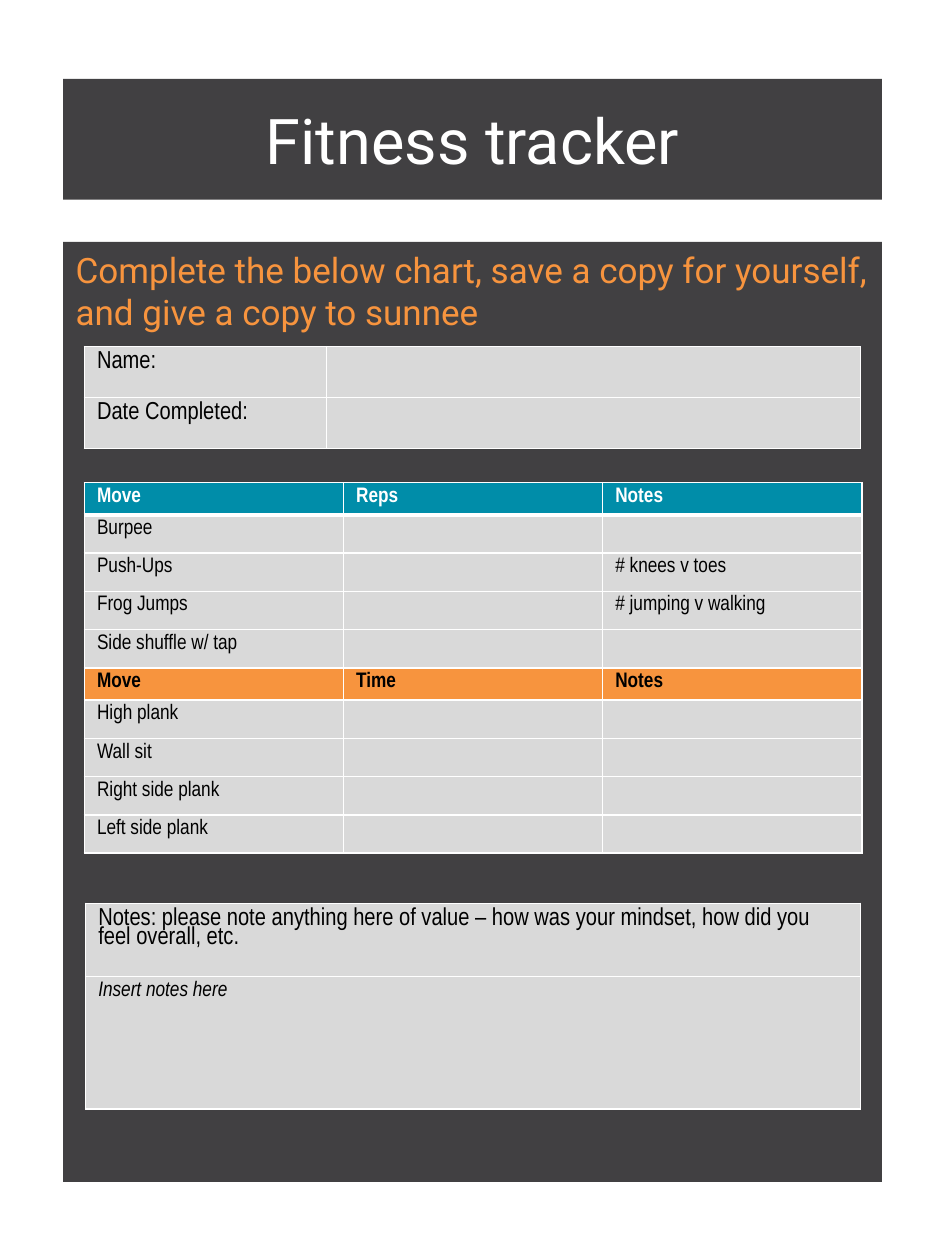
from dataclasses import dataclass

from lxml import etree
from pptx import Presentation
from pptx import util as u
from pptx.dml.color import RGBColor
from pptx.enum import text
from pptx.oxml.ns import qn

# The slide is a grid of 75 columns by 100 rows.
COLUMNS, ROWS = 75, 100
WIDTH, HEIGHT = u.Inches(7.5), u.Inches(10)

CHARCOAL = RGBColor(0x41, 0x40, 0x42)
WHITE = RGBColor(0xFF, 0xFF, 0xFF)
BLACK = RGBColor(0x00, 0x00, 0x00)
ORANGE = RGBColor(0xF7, 0x94, 0x3E)
TEAL = RGBColor(0x00, 0x8D, 0xA9)
GREY = RGBColor(0xD9, 0xD9, 0xD9)

HEADING_FONT, TABLE_FONT = "Roboto", "Arial Narrow"
TABLE_LINE_SPACING = 0.84


@dataclass(frozen=True)
class Area:
    """A rectangle in grid columns and rows."""
    left: float
    top: float
    width: float
    height: float

    def lengths(self) -> tuple[int, int, int, int]:
        return (across(self.left), down(self.top),
                across(self.width), down(self.height))


@dataclass(frozen=True)
class RowStyle:
    size: int = 12
    color: RGBColor = BLACK
    fill: RGBColor = GREY
    bold: bool = False
    italic: bool = False
    top_line: float = 1
    bottom_line: float = 1


@dataclass(frozen=True)
class Row:
    cells: tuple[str, ...]
    height: float
    style: RowStyle


@dataclass(frozen=True)
class Grid:
    left: float
    top: float
    column_widths: tuple[float, ...]
    rows: tuple[Row, ...]


def across(columns: float) -> int:
    return round(WIDTH * columns / COLUMNS)


def down(rows: float) -> int:
    return round(HEIGHT * rows / ROWS)


def fill_placeholder(shape, area: Area, words: str, size: int, color: RGBColor,
                     alignment, anchor) -> None:
    shape.left, shape.top, shape.width, shape.height = area.lengths()
    shape.fill.solid()
    shape.fill.fore_color.rgb = CHARCOAL
    frame = shape.text_frame
    frame.word_wrap = True
    frame.auto_size = text.MSO_AUTO_SIZE.NONE
    frame.vertical_anchor = anchor
    paragraph = frame.paragraphs[0]
    paragraph.alignment = alignment
    paragraph.space_before = u.Pt(0)
    properties = paragraph._p.get_or_add_pPr()
    properties.set("marL", "0")
    properties.set("indent", "0")
    etree.SubElement(properties, qn("a:buNone"))
    run = paragraph.add_run()
    run.text = words
    run.font.name, run.font.size = HEADING_FONT, u.Pt(size)
    run.font.color.rgb = color


def add_borders(cell, style: RowStyle) -> None:
    properties = cell._tc.get_or_add_tcPr()
    for side, points in (("L", 1), ("R", 1),
                         ("T", style.top_line), ("B", style.bottom_line)):
        line = etree.SubElement(properties, qn(f"a:ln{side}"), w=str(u.Pt(points)))
        fill = etree.SubElement(line, qn("a:solidFill"))
        etree.SubElement(fill, qn("a:srgbClr"), val=str(WHITE))


def write_cell(cell, words: str, style: RowStyle) -> None:
    add_borders(cell, style)
    cell.fill.solid()
    cell.fill.fore_color.rgb = style.fill
    paragraph = cell.text_frame.paragraphs[0]
    paragraph.line_spacing = TABLE_LINE_SPACING
    if not words:
        # Keeps an empty cell as low as its neighbours.
        etree.SubElement(paragraph._p, qn("a:endParaRPr"), sz=str(style.size * 100))
        return
    run = paragraph.add_run()
    run.text = words
    font = run.font
    font.name, font.size = TABLE_FONT, u.Pt(style.size)
    font.bold, font.italic = style.bold, style.italic
    font.color.rgb = style.color


def add_grid(slide, grid: Grid) -> None:
    area = Area(grid.left, grid.top, sum(grid.column_widths),
                sum(row.height for row in grid.rows))
    table = slide.shapes.add_table(
        len(grid.rows), len(grid.column_widths), *area.lengths()).table
    table.first_row = table.horz_banding = False
    for column, width in zip(table.columns, grid.column_widths):
        column.width = across(width)
    for table_row, row in zip(table.rows, grid.rows):
        table_row.height = down(row.height)
        for cell, words in zip(table_row.cells, row.cells):
            write_cell(cell, words, row.style)


PLAIN = RowStyle()
LARGE = RowStyle(size=14)
REPS_HEADER = RowStyle(color=WHITE, fill=TEAL, bold=True, bottom_line=3)
BELOW_HEADER = RowStyle(top_line=3)
TIME_HEADER = RowStyle(fill=ORANGE, bold=True)
MOVE_HEIGHT = 2.57

MOVES = (
    (("Move", "Reps", "Notes"), REPS_HEADER),
    (("Burpee", "", ""), BELOW_HEADER),
    (("Push-Ups", "", "# knees v toes"), PLAIN),
    (("Frog Jumps", "", "# jumping v walking"), PLAIN),
    (("Side shuffle w/ tap", "", ""), PLAIN),
    (("Move", "Time", "Notes"), TIME_HEADER),
    (("High plank", "", ""), PLAIN),
    (("Wall sit", "", ""), PLAIN),
    (("Right side plank", "", ""), PLAIN),
    (("Left side plank", "", ""), PLAIN),
)

GRIDS = (
    Grid(6.7, 38.3, (20.57,) * 3,
         tuple(Row(cells, MOVE_HEIGHT, style) for cells, style in MOVES)),
    Grid(6.7, 27.5, (19.2, 42.4),
         tuple(Row((label, ""), 4.05, LARGE)
               for label in ("Name:", "Date Completed:"))),
    Grid(6.8, 71.7, (61.5,), (
        Row(("Notes: please note anything here of value – how was your mindset, "
             "how did you feel overall, etc.",), 5.8, LARGE),
        Row(("Insert notes here",), 10.5, RowStyle(italic=True)),
    )),
)


def main() -> None:
    presentation = Presentation()
    presentation.slide_width, presentation.slide_height = WIDTH, HEIGHT
    slide = presentation.slides.add_slide(presentation.slide_layouts[1])
    fill_placeholder(slide.shapes.title, Area(5, 6.25, 65, 9.6),
                     "Fitness tracker", 36, WHITE,
                     text.PP_ALIGN.CENTER, text.MSO_ANCHOR.MIDDLE)
    fill_placeholder(slide.placeholders[1], Area(5, 19.2, 65, 74.6),
                     "Complete the below chart, save a copy for yourself, "
                     "and give a copy to sunnee", 20, ORANGE,
                     text.PP_ALIGN.LEFT, text.MSO_ANCHOR.TOP)
    for grid in GRIDS:
        add_grid(slide, grid)
    presentation.save("out.pptx")


if __name__ == "__main__":
    main()
